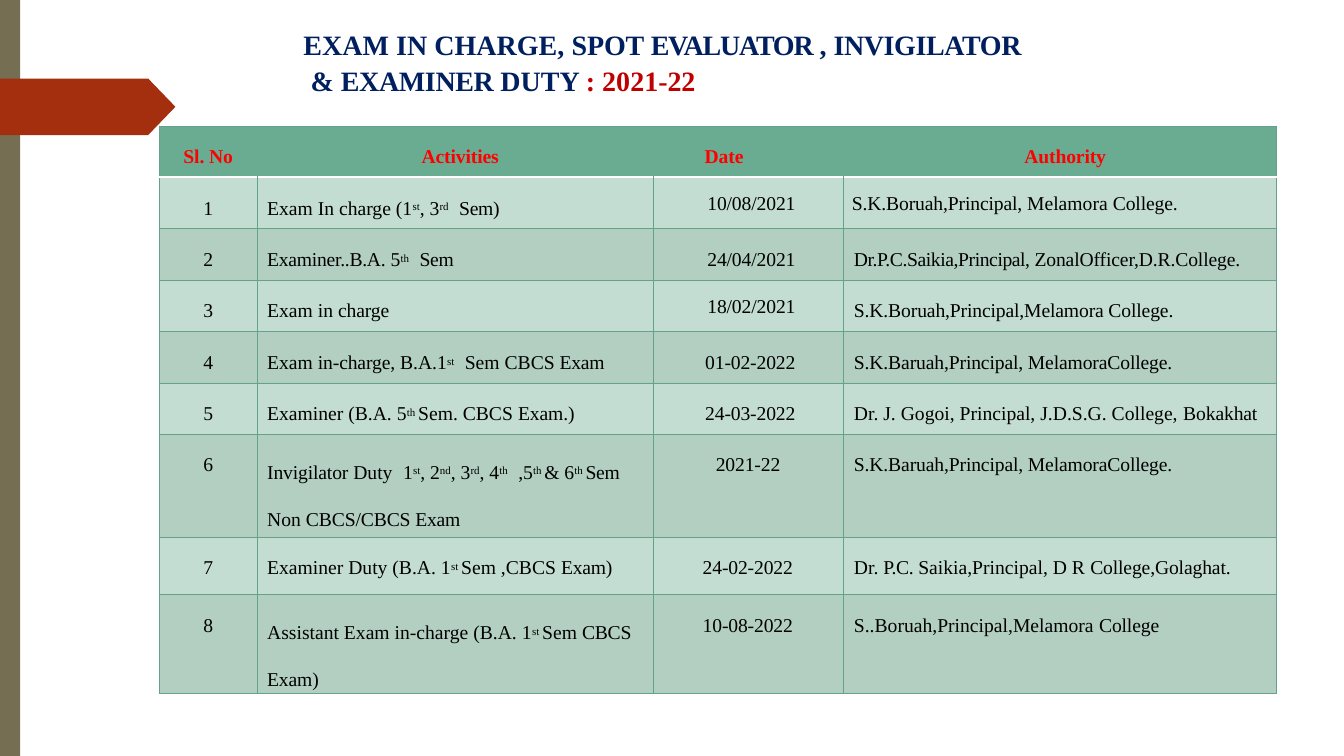
import dataclasses

import lxml.etree
import pptx
import pptx.dml.color
import pptx.enum.shapes
import pptx.enum.text
import pptx.oxml.ns
import pptx.util

Inches = pptx.util.Inches
Pt = pptx.util.Pt
Align = pptx.enum.text.PP_ALIGN
qn = pptx.oxml.ns.qn


@dataclasses.dataclass(frozen=True)
class Theme:
    font: str = "Times New Roman"
    stripe: str = "766E53"
    arrow: str = "A42F0F"
    title: str = "001F5F"
    year: str = "C00000"
    heading: str = "FF0000"
    body: str = "000000"
    green: str = "6AAC91"
    even_row: str = "B3CFC2"
    border: str = "64A389"
    rule: str = "FFFFFF"
    title_size: float = 20
    body_size: float = 14
    raised_size: float = 13.5


THEME = Theme()
COLUMNS = (0.97, 3.93, 1.89, 4.29)
ROW_HEIGHTS = (0.51,) * 6 + (1.02, 0.57, 0.98)
PLAIN = {"margin_left": 0.1}
HIGH = {"margin_top": 0.16}
RIGHT = {"margin_right": 0.48}
LEFT = {"margin_left": 0.49}

# A run is (text, letter spacing in points); ^ opens and closes raised text.
TITLE = (("EXAM IN CHARGE, ", 0), ("SPOT ", -0.1), ("EVALUATOR ", -0.9), (", ", 0),
         ("INVIGILATOR ", -0.3), ("& ", 0), ("EXAMINER ", -0.3), ("DUTY ", 0))
YEAR = ((": 2021-", 0), ("22", -0.2))
HEADINGS = (("Sl. No", {}), ("Activities", PLAIN), ("Date", {"margin_left": 0.51}),
            ("Authority", PLAIN))
WIDE_SPACE = (" ", 4)

# Activity runs, date, date margins, authority runs, authority margins
DUTIES = (
    ((("Exam In charge (1^st^, 3^rd^", 0), WIDE_SPACE, ("Sem)", -0.2)),
     "10/08/2021", RIGHT | HIGH,
     (("S.K.Boruah,Principal, ", -0.1), ("Melamora ", 0), ("College.", -0.1)),
     {"margin_left": 0.08} | HIGH),
    ((("Examiner..B.A.", -0.2), (" 5^th^", 0), WIDE_SPACE, ("Sem", -0.2)),
     "24/04/2021", RIGHT,
     (("Dr.P.C.Saikia,Principal, ", -0.3), ("ZonalOfficer,D.R.College.", -0.1)), PLAIN),
    ((("Exam in ", 0), ("charge", -0.1)),
     "18/02/2021", RIGHT | HIGH,
     (("S.K.Boruah,Principal,Melamora College.", -0.1),), PLAIN),
    ((("Exam ", 0), ("in-charge, ", -0.1), ("B.A.1^st^", 0), WIDE_SPACE,
      ("Sem CBCS", 0), (" Exam", -0.2)),
     "01-02-2022", RIGHT,
     (("S.K.Baruah,Principal, MelamoraCollege.", -0.1),), PLAIN),
    ((("Examiner (B.A. 5^th ^Sem. CBCS ", 0), ("Exam.)", -0.1)),
     "24-03-2022", RIGHT,
     (("Dr. J. Gogoi, Principal, J.D.S.G. College, ", 0), ("Bokakhat", -0.1)), PLAIN),
    ((("Invigilator ", -0.1), ("Duty", 0), WIDE_SPACE, ("1^st^, 2^nd^, 3^rd^, 4^th^", 0),
      WIDE_SPACE, (",5^th ^& 6^th ^", 0), ("Sem ", -0.2), ("Non ", 0),
      ("CBCS/CBCS ", -0.1), ("Exam", -0.2)),
     "2021-22", {"margin_left": 0.62},
     (("S.K.Baruah,Principal, MelamoraCollege.", -0.1),), PLAIN),
    ((("Examiner Duty (B.A. 1^st ^Sem ,CBCS ", 0), ("Exam)", -0.2)),
     "24-02-2022", LEFT,
     (("Dr. ", 0), ("P.C. ", -0.3), ("Saikia,Principal, D R ", 0),
      ("College,Golaghat.", -0.1)), PLAIN),
    ((("Assistant Exam in-charge (B.A. 1^st ^Sem ", 0), ("CBCS ", -0.2), ("Exam)", -0.1)),
     "10-08-2022", LEFT,
     (("S..Boruah,Principal,Melamora ", 0), ("College", -0.1)), PLAIN),
)


def rgb(color):
    return pptx.dml.color.RGBColor.from_string(color)


def apply(target, values):
    for name, value in values.items():
        setattr(target, name, value)


def add_runs(para, runs, color, size, bold=False):
    for text, spacing in runs:
        for index, part in enumerate(text.split("^")):
            if not part:
                continue
            raised = index % 2 == 1
            span = para.add_run()
            span.text = part
            apply(span.font, {"name": THEME.font, "bold": bold,
                              "size": Pt(THEME.raised_size if raised else size)})
            span.font.color.rgb = rgb(color)
            props = span.font._element
            if spacing:
                props.set("spc", str(round(spacing * 100)))
            if raised:
                props.set("baseline", "22000")


def paint(shape, color):
    shape.shadow.inherit = False
    shape.fill.solid()
    shape.fill.fore_color.rgb = rgb(color)
    shape.line.fill.background()


def add_side_marks(page, height):
    """Draw the stripe down the left edge and the arrow across it."""
    stripe = page.shapes.add_shape(pptx.enum.shapes.MSO_SHAPE.RECTANGLE,
                                   0, 0, Inches(0.2), Inches(height))
    paint(stripe, THEME.stripe)
    top, middle, bottom = Inches(0.78), Inches(1.06), Inches(1.34)
    shoulder, tip = Inches(1.47), Inches(1.74)
    outline = page.shapes.build_freeform(0, top, scale=1.0)
    outline.add_line_segments([(shoulder, top), (tip, middle), (shoulder, bottom), (0, bottom)])
    paint(outline.convert_to_shape(), THEME.arrow)


def add_title(page, left, top, width, height):
    title = page.shapes.title
    apply(title, {"left": Inches(left), "top": Inches(top),
                  "width": Inches(width), "height": Inches(height)})
    apply(title.text_frame, {"margin_left": 0, "margin_right": 0, "margin_bottom": 0,
                             "margin_top": Inches(0.01), "word_wrap": True,
                             "auto_size": pptx.enum.text.MSO_AUTO_SIZE.NONE,
                             "vertical_anchor": pptx.enum.text.MSO_ANCHOR.TOP})
    para = title.text_frame.paragraphs[0]
    apply(para, {"alignment": Align.LEFT, "line_spacing": 1.05})
    props = para._p.get_or_add_pPr()
    props.set("marL", str(Inches(0.08)))
    props.set("indent", str(Inches(-0.07)))
    add_runs(para, TITLE, THEME.title, THEME.title_size, True)
    add_runs(para, YEAR, THEME.year, THEME.title_size, True)


def set_border(cell, side, color, width):
    line = lxml.etree.SubElement(cell._tc.get_or_add_tcPr(), qn("a:ln" + side),
                                 w=str(Pt(width)))
    if color is None:
        lxml.etree.SubElement(line, qn("a:noFill"))
    else:
        fill = lxml.etree.SubElement(line, qn("a:solidFill"))
        lxml.etree.SubElement(fill, qn("a:srgbClr"), val=color)


def style_cell(cell, row, column):
    """Set the borders, then the fill, in the order the file format asks for."""
    edge, rule = (THEME.border, 0.75), (THEME.rule, 1.5)
    header, last = row == 0, len(COLUMNS) - 1
    set_border(cell, "L", *((None, 0.75) if header and column > 0 else edge))
    set_border(cell, "R", *((None, 0.75) if header and column < last else edge))
    set_border(cell, "T", *(rule if row == 1 else edge))
    set_border(cell, "B", *(rule if header else edge))
    striped = not header and row % 2 == 0
    cell.fill.solid()
    cell.fill.fore_color.rgb = rgb(THEME.even_row if striped else THEME.green)
    if not header and not striped:
        tint = cell._tc.tcPr.find(qn("a:solidFill"))[0]
        lxml.etree.SubElement(tint, qn("a:alpha"), val="40000")


def fill_cell(cell, runs, color, margins, align=Align.LEFT, bold=False):
    insets = {"margin_left": 0, "margin_right": 0, "margin_top": 0.2, "margin_bottom": 0}
    apply(cell, {name: Inches(value) for name, value in (insets | margins).items()})
    para = cell.text_frame.paragraphs[0]
    para.alignment = align
    add_runs(para, runs, color, THEME.body_size, bold)


def add_duty_table(page, left, top):
    frame = page.shapes.add_table(len(ROW_HEIGHTS), len(COLUMNS), Inches(left), Inches(top),
                                  Inches(sum(COLUMNS)), Inches(sum(ROW_HEIGHTS)))
    table = frame.table
    apply(table, {"first_row": False, "horz_banding": False})
    for column, width in zip(table.columns, COLUMNS):
        column.width = Inches(width)
    for row, height in enumerate(ROW_HEIGHTS):
        table.rows[row].height = Inches(height)
        for column in range(len(COLUMNS)):
            style_cell(table.cell(row, column), row, column)
    for column, (heading, margins) in enumerate(HEADINGS):
        align = Align.LEFT if heading == "Date" else Align.CENTER
        fill_cell(table.cell(0, column), ((heading, -0.1),), THEME.heading, margins, align, True)
    for row, (activity, date, date_margins, authority, margins) in enumerate(DUTIES, 1):
        tall = ROW_HEIGHTS[row] > 0.9
        date_align = Align.RIGHT if "margin_right" in date_margins else Align.LEFT
        cells = ((((str(row), 0),), {}, Align.CENTER),
                 (activity, PLAIN | ({"margin_top": 0.02} if tall else {}), Align.LEFT),
                 (((date, -0.1),), date_margins, date_align),
                 (authority, margins, Align.LEFT))
        for column, (runs, insets, align) in enumerate(cells):
            fill_cell(table.cell(row, column), runs, THEME.body, insets, align)
        if tall:
            table.cell(row, 1).text_frame.paragraphs[0].line_spacing = Pt(33.6)


def main():
    deck = pptx.Presentation()
    apply(deck, {"slide_width": Inches(13.33), "slide_height": Inches(7.5)})
    page = deck.slides.add_slide(deck.slide_layouts[5])
    add_side_marks(page, 7.5)
    add_title(page, 3, 0.25, 7.22, 0.69)
    add_duty_table(page, 1.58, 1.25)
    deck.save("out.pptx")


if __name__ == "__main__":
    main()
